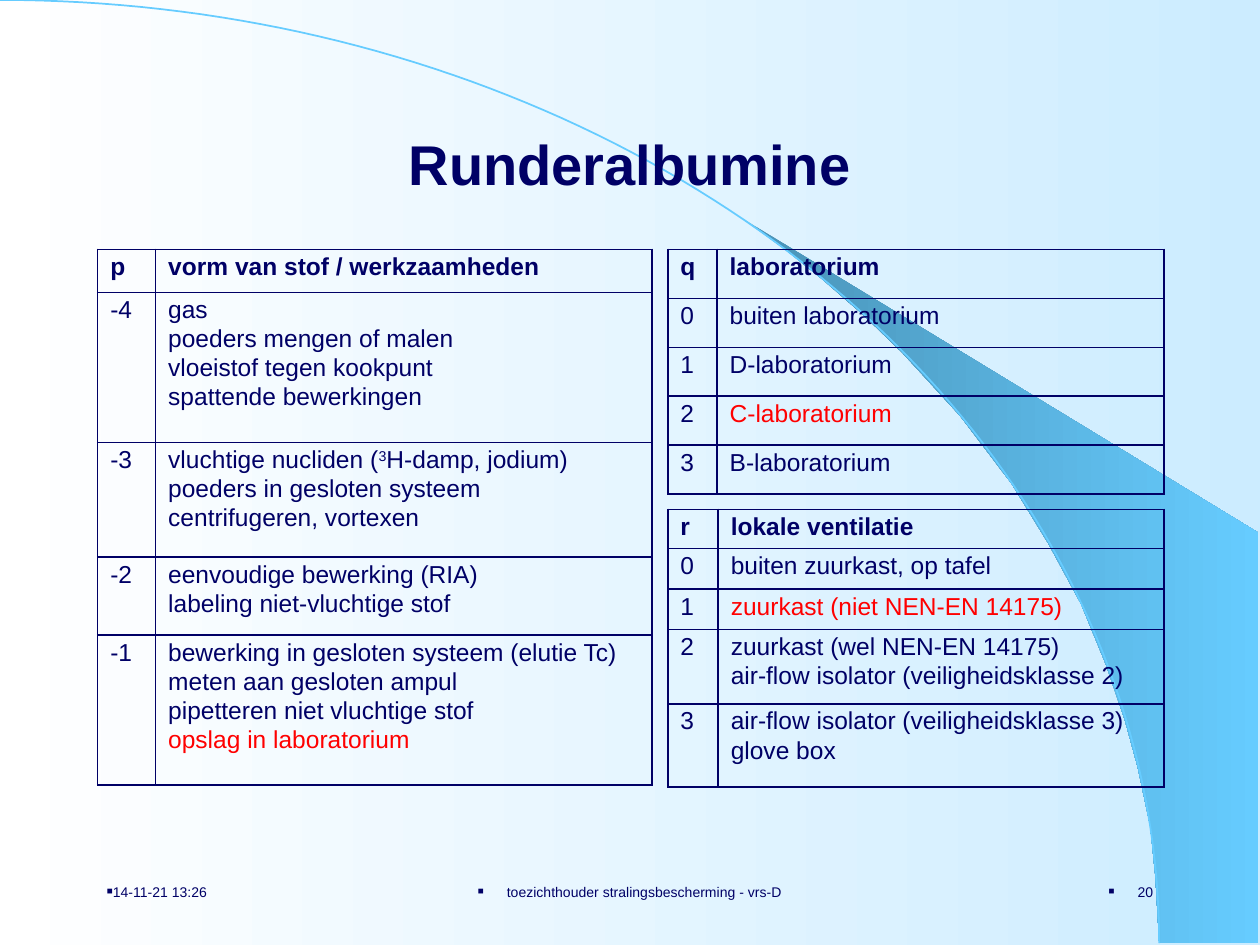
from dataclasses import dataclass
from math import cos, pi, sin

from lxml.etree import SubElement
from pptx import Presentation
from pptx.dml.color import RGBColor
from pptx.enum.text import MSO_ANCHOR, PP_ALIGN
from pptx.oxml.ns import qn
from pptx.util import Inches, Pt

W, H = Inches(10), Inches(7.5)


@dataclass(frozen=True)
class Theme:
    font: str = "Arial"
    navy: str = "000066"
    red: str = "FF0000"
    sky: str = "66CCFF"
    deep: str = "4992B6"
    white: str = "FFFFFF"
    pale: str = "CCECFF"
    title: float = 32
    body: float = 14
    footer: float = 8
    line: float = 1
    before: float = 2.5


T = Theme()


def x(share):
    """Horizontal length as a percentage of the slide width."""
    return round(W * share / 100)


def y(share):
    """Vertical length as a percentage of the slide height."""
    return round(H * share / 100)


def box(left, top, width, height):
    return x(left), y(top), x(width), y(height)


def split(total, weights):
    return [round(total * w / sum(weights)) for w in weights]


def set_gradient(fill, start, end):
    fill.gradient()
    fill.gradient_angle = 0
    for stop, position, color in zip(fill.gradient_stops, (0, 1), (start, end)):
        stop.position = position
        stop.color.rgb = RGBColor.from_string(color)


def add_run(p, text, size, color=T.navy, bold=False, superscript=False):
    r = p.add_run()
    r.text = text
    r.font.name, r.font.size, r.font.bold = T.font, Pt(size), bold
    r.font.color.rgb = RGBColor.from_string(color)
    if superscript:
        r.font._element.set("baseline", "30000")


def add_outline(s, points, closed):
    points = [(x(px), y(py)) for px, py in points]
    builder = s.shapes.build_freeform(*points[0], scale=1.0)
    builder.add_line_segments(points[1:], close=closed)
    sp = builder.convert_to_shape()
    sp.shadow.inherit = False
    return sp


def add_text(s, area, text, size, align, bold=False):
    tf = s.shapes.add_textbox(*area).text_frame
    tf.word_wrap = True
    tf.vertical_anchor = MSO_ANCHOR.MIDDLE
    p = tf.paragraphs[0]
    p.alignment = align
    add_run(p, text, size, bold=bold)
    return p


def add_bullet(p, indent):
    pPr = p._p.get_or_add_pPr()
    pPr.set("marL", str(x(indent)))
    pPr.set("indent", str(-x(indent)))
    SubElement(pPr, qn("a:buSzPct"), val="70000")
    SubElement(pPr, qn("a:buFont"), typeface=T.font)
    SubElement(pPr, qn("a:buChar"), char="■")


def add_borders(cell):
    tcPr = cell._tc.get_or_add_tcPr()
    for i, side in enumerate(("lnL", "lnR", "lnT", "lnB")):
        ln = SubElement(tcPr, qn(f"a:{side}"), w=str(Pt(T.line)))
        fill = SubElement(ln, qn("a:solidFill"))
        SubElement(fill, qn("a:srgbClr"), val=T.navy)
        tcPr.insert(i, ln)


def fill_cell(cell, lines, bold):
    cell.fill.background()
    add_borders(cell)
    tf = cell.text_frame
    for i, line in enumerate(lines):
        p = tf.paragraphs[0] if i == 0 else tf.add_paragraph()
        p.line_spacing, p.space_before = 0.9, Pt(T.before)
        runs = [(line, {})] if isinstance(line, str) else line
        for text, style in runs:
            add_run(p, text, T.body, bold=bold, **style)


def add_grid(s, area, col_weights, row_weights, rows):
    table = s.shapes.add_table(len(rows), len(col_weights), *area).table
    table.first_row = table.horz_banding = False
    for col, width in zip(table.columns, split(area[2], col_weights)):
        col.width = width
    for row, height in zip(table.rows, split(area[3], row_weights)):
        row.height = height
    for i, (key, *lines) in enumerate(rows):
        fill_cell(table.cell(i, 0), [key], bold=i == 0)
        fill_cell(table.cell(i, 1), lines, bold=i == 0)


def red(text):
    return [(text, {"color": T.red})]


def add_backdrop(s):
    set_gradient(s.background.fill, T.white, T.pale)
    # Wedge between the arc and the right edge
    arc_side = [(62.4, 26.5), (65.3, 29.6), (68.5, 33.3), (71.6, 37.3),
                (76.2, 44), (80.3, 51.2), (83.2, 57.5), (85.8, 63.9),
                (87.8, 70.4), (89.3, 76.3), (90.3, 81.2), (91.3, 87.5),
                (91.7, 92.8), (92, 99.8)]
    wedge = add_outline(s, [(99.9, 99.8), (99.9, 56.4), (58.9, 23.1)] + arc_side, True)
    set_gradient(wedge.fill, T.deep, T.sky)
    wedge.line.fill.background()
    # Quarter ellipse from the top left corner
    steps = 90
    angles = [i * pi / 2 / steps for i in range(steps + 1)]
    arc = add_outline(s, [(92 * sin(a), 99.8 * (1 - cos(a))) for a in angles], False)
    arc.fill.background()
    arc.line.color.rgb = RGBColor.from_string(T.sky)
    arc.line.width = Pt(T.line)


def add_footer(s):
    items = [(7.5, 20.8, "14-11-21 13:26", PP_ALIGN.LEFT, 0),
             (28.8, 42.4, "toezichthouder stralingsbescherming - vrs-D", PP_ALIGN.CENTER, 2.3),
             (71.7, 20.8, "20", PP_ALIGN.RIGHT, 2.3)]
    for left, width, text, align, indent in items:
        p = add_text(s, box(left, 91, width, 6.7), text, T.footer, align)
        add_bullet(p, indent)


def add_tables(s):
    # Form of the substance and kind of work
    add_grid(s, box(7.75, 26.4, 44, 56.7), (46, 394), (34, 119, 91, 62, 119), [
        ("p", "vorm van stof / werkzaamheden"),
        ("-4", "gas", "poeders mengen of malen", "vloeistof tegen kookpunt",
         "spattende bewerkingen"),
        ("-3", [("vluchtige nucliden (", {}), ("3", {"superscript": True}),
                ("H-damp, jodium)", {})],
         "poeders in gesloten systeem", "centrifugeren, vortexen"),
        ("-2", "eenvoudige bewerking (RIA)", "labeling niet-vluchtige stof"),
        ("-1", "bewerking in gesloten systeem (elutie Tc)", "meten aan gesloten ampul",
         "pipetteren niet vluchtige stof", red("opslag in laboratorium")),
    ])
    # Laboratory class
    add_grid(s, box(53, 26.4, 39.4, 25.9), (39, 354), [1] * 5, [
        ("q", "laboratorium"),
        ("0", "buiten laboratorium"),
        ("1", "D-laboratorium"),
        ("2", red("C-laboratorium")),
        ("3", "B-laboratorium"),
    ])
    # Local ventilation
    add_grid(s, box(53, 53.9, 39.4, 29.4), (40, 354), (31, 32, 32, 59, 66), [
        ("r", "lokale ventilatie"),
        ("0", "buiten zuurkast, op tafel"),
        ("1", red("zuurkast (niet NEN-EN 14175)")),
        ("2", "zuurkast (wel NEN-EN 14175)", "air-flow isolator (veiligheidsklasse 2)"),
        ("3", "air-flow isolator (veiligheidsklasse 3)", "glove box"),
    ])


def main():
    prs = Presentation()
    prs.slide_width, prs.slide_height = W, H
    s = prs.slides.add_slide(prs.slide_layouts[6])
    add_backdrop(s)
    add_footer(s)
    add_text(s, box(7.5, 8.9, 85, 16.7), "Runderalbumine", T.title, PP_ALIGN.CENTER, bold=True)
    add_tables(s)
    prs.save("out.pptx")


if __name__ == "__main__":
    main()
